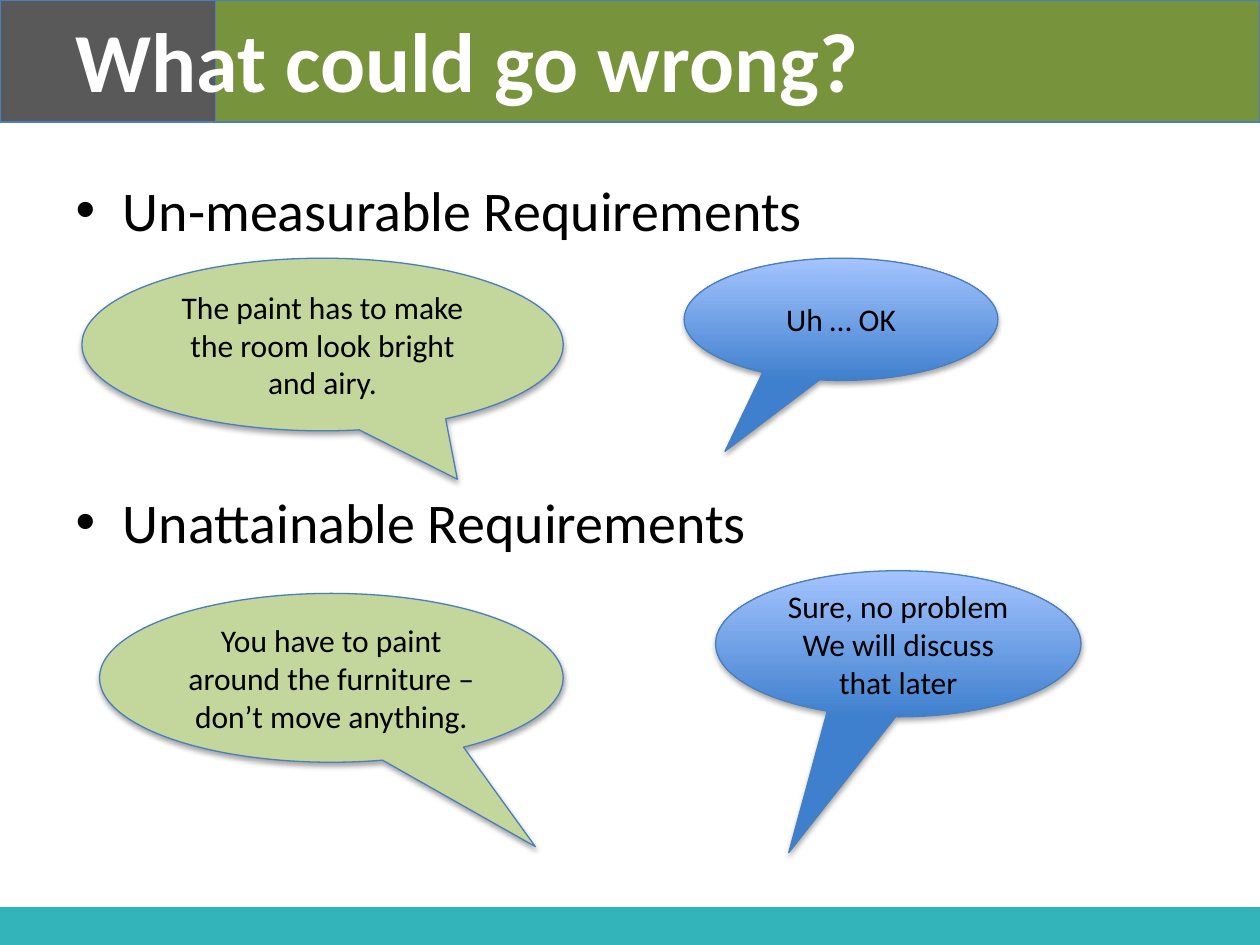
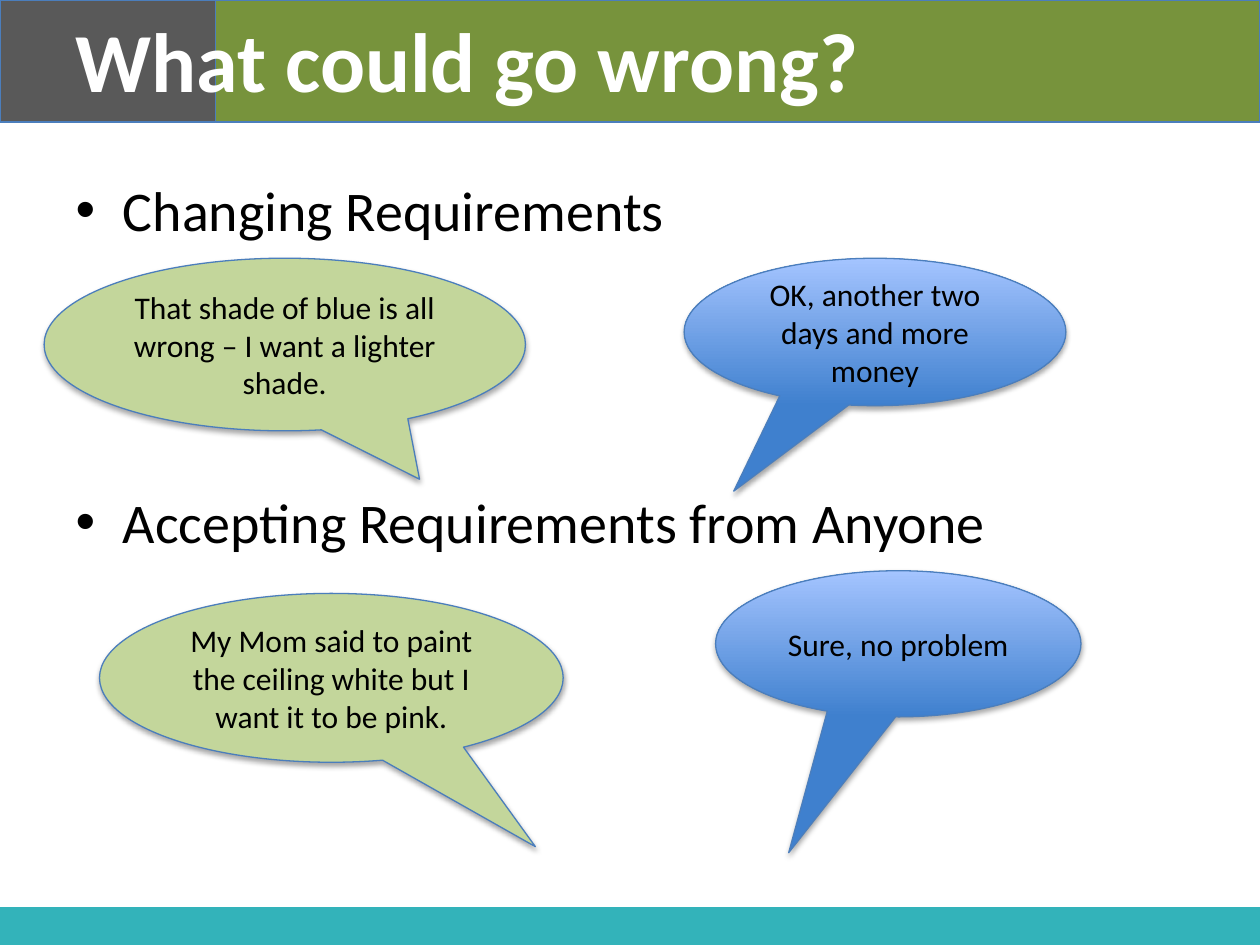
from lxml import etree
from pptx import Presentation
from pptx.dml.color import RGBColor
from pptx.enum.shapes import MSO_SHAPE
from pptx.enum.text import MSO_ANCHOR, PP_ALIGN
from pptx.oxml import parse_xml
from pptx.oxml.ns import nsdecls, qn
from pptx.util import Inches, Pt

RECT = MSO_SHAPE.RECTANGLE
CALLOUT = MSO_SHAPE.OVAL_CALLOUT
TOP, MIDDLE = MSO_ANCHOR.TOP, MSO_ANCHOR.MIDDLE
LEFT, CENTER = PP_ALIGN.LEFT, PP_ALIGN.CENTER

FONT = "Calibri"
COLORS = {
    "teal": "00A0A9", "gray": "595959", "olive": "77933C", "line": "4B7EBC",
    "green": "C3D69B", "blue_dark": "3F80CE", "blue_light": "A4C4FF",
    "white": "FFFFFF", "black": "000000",
}
TITLE = "What could go wrong?"
TITLE_BOX = (0.5, 0.02, 6.43, 0.96)
BODY_BOX = (0.5, 1.34, 9, 4.95)
BULLET_GAP = 140
BANDS = [
    ((0, 7.2, 10, 0.3), "teal", 80),
    ((0, 0, 1.71, 0.97), "gray", None),
    ((1.71, 0, 8.29, 0.97), "olive", None),
]
TAILS = {
    "client_top": (0.28, 0.78),
    "painter_top": (-0.37, 1.08),
    "client_low": (0.44, 1.0),
    "painter_low": (-0.3, 1.43),
}
CLIENT_LOW = (0.79, 4.71, 3.68, 1.34)
PAINTER_LOW = (5.68, 4.53, 2.9, 1.16)
SLIDES = [
    {
        "bullets": ["Un-measurable Requirements", "Unattainable Requirements"],
        "callouts": [
            ("client_top", (0.65, 2.05, 3.82, 1.37),
             ["The paint has to make the room look bright and airy."]),
            ("painter_top", (5.43, 2.05, 2.49, 0.97), ["Uh … OK"]),
            ("client_low", CLIENT_LOW,
             ["You have to paint around the furniture – don’t move anything."]),
            ("painter_low", PAINTER_LOW,
             ["Sure, no problem", "We will discuss that later"]),
        ],
    },
    {
        "bullets": ["Changing Requirements", "Accepting Requirements from Anyone"],
        "callouts": [
            ("client_top", (0.35, 2.05, 3.82, 1.37),
             ["That shade of blue is all wrong – I want a lighter shade."]),
            ("painter_top", (5.43, 2.05, 3.03, 1.17),
             ["OK, another two days and more money"]),
            ("client_low", CLIENT_LOW,
             ["My Mom said to paint the ceiling white but I want it to be pink."]),
            ("painter_low", PAINTER_LOW, ["Sure, no problem"]),
        ],
    },
]


def rgb(name):
    return RGBColor.from_string(COLORS[name])


def place(sp, box):
    sp.left, sp.top, sp.width, sp.height = map(Inches, box)


def write(tf, lines, size, color, align, anchor, bold=False, gap=0):
    tf.word_wrap = True
    tf.vertical_anchor = anchor
    for i, line in enumerate(lines):
        p = tf.paragraphs[0] if i == 0 else tf.add_paragraph()
        p.text = line
        p.alignment = align
        p.space_before = Pt(gap if i else 0)
        p.font.name = FONT
        p.font.size = Pt(size)
        p.font.bold = bold
        p.font.color.rgb = rgb(color)


def add_outlined(slide, kind, box):
    sp = slide.shapes.add_shape(kind, *map(Inches, box))
    sp.shadow.inherit = False
    sp.line.color.rgb = rgb("line")
    sp.line.width = Pt(0.75)
    return sp


def add_bands(slide):
    layout = slide.slide_layout
    for ph in list(layout.placeholders):
        if ph.placeholder_format.idx >= 10:
            ph.element.getparent().remove(ph.element)
    for i, (box, color, alpha) in enumerate(BANDS):
        sp = add_outlined(slide, RECT, box)
        sp.fill.solid()
        sp.fill.fore_color.rgb = rgb(color)
        if alpha:
            sp.line.fill.background()
            clr = sp.element.spPr.find(qn("a:solidFill"))[0]
            etree.SubElement(clr, qn("a:alpha")).set("val", str(alpha * 1000))
        layout.shapes.element.insert(2 + i, sp.element)


def add_shadow(sp):
    effects = sp.element.spPr.find(qn("a:effectLst"))
    effects.append(parse_xml(
        f'<a:outerShdw {nsdecls("a")} blurRad="{Pt(3.1)}" dist="{Pt(1.8)}" '
        f'dir="5400000" rotWithShape="0"><a:srgbClr val="{COLORS["black"]}">'
        '<a:alpha val="35000"/></a:srgbClr></a:outerShdw>'))


def add_callout(slide, role, box, lines):
    sp = add_outlined(slide, CALLOUT, box)
    for i, value in enumerate(TAILS[role]):
        sp.adjustments[i] = value
    if role.startswith("client"):
        sp.fill.solid()
        sp.fill.fore_color.rgb = rgb("green")
    else:
        sp.fill.gradient()
        sp.fill.gradient_angle = 90
        stops = zip(sp.fill.gradient_stops, ("blue_dark", "blue_light"))
        for i, (stop, color) in enumerate(stops):
            stop.position = i
            stop.color.rgb = rgb(color)
    add_shadow(sp)
    write(sp.text_frame, lines, 18, "black", CENTER, MIDDLE)


def main():
    prs = Presentation()
    prs.slide_width, prs.slide_height = Inches(10), Inches(7.5)
    layout = prs.slide_layouts[1]
    for number, content in enumerate(SLIDES):
        slide = prs.slides.add_slide(layout)
        if number == 0:
            add_bands(slide)
        title, body = slide.shapes.title, slide.placeholders[1]
        place(title, TITLE_BOX)
        write(title.text_frame, [TITLE], 48, "white", LEFT, TOP, bold=True)
        place(body, BODY_BOX)
        write(body.text_frame, content["bullets"], 32, "black", LEFT, TOP,
              gap=BULLET_GAP)
        for role, box, lines in content["callouts"]:
            add_callout(slide, role, box, lines)
    prs.save("out.pptx")


if __name__ == "__main__":
    main()
